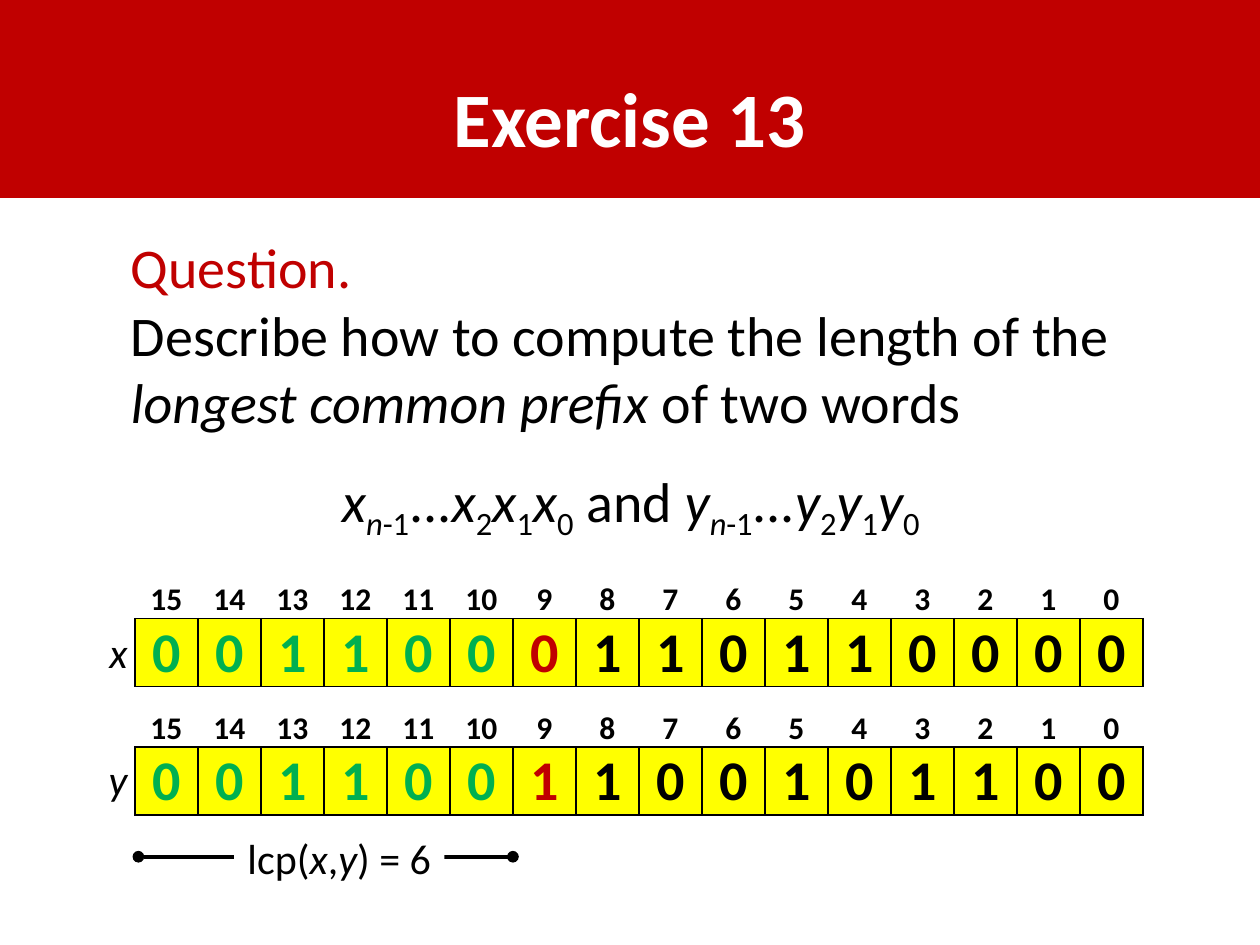
from lxml import etree
from pptx import Presentation
from pptx import util as u
from pptx.dml.color import RGBColor
from pptx.enum import shapes, text
from pptx.oxml import ns

RED, GREEN, YELLOW = "C00000", "00B050", "FFFF00"
BLACK, WHITE = "000000", "FFFFFF"
NO_STYLE = "{2D5ABB26-0587-4C30-8999-92F81FD0307C}"
LEFT, CENTER, RIGHT = text.PP_ALIGN.LEFT, text.PP_ALIGN.CENTER, text.PP_ALIGN.RIGHT


def color(hex_string):
    return RGBColor.from_string(hex_string)


def child(parent, tag, **attributes):
    return etree.SubElement(parent, ns.qn(tag), **attributes)


def indexed_word(name):
    """Runs for a word written as its bits, from n-1 down to 0."""
    runs = [(name, "i"), ("n", "is"), ("-1", "s"), ("...", "")]
    for index in "210":
        runs += [(name, "i"), (index, "s")]
    return runs


class ExerciseSlide:
    font = "Calibri"

    def __init__(self, slide):
        self.slide = slide
        self.shapes = slide.shapes

    def paragraph(self, paragraph, runs, size, ink=BLACK, align=LEFT, bold=False, before=0):
        """Fill a paragraph; each run is (words, flags), i for italic, s for subscript."""
        paragraph.alignment = align
        paragraph.space_before = u.Pt(before)
        font = paragraph.font
        font.name, font.size, font.bold = self.font, u.Pt(size), bold
        font.color.rgb = color(ink)
        for words, flags in runs:
            run = paragraph.add_run()
            run.text = words
            if "i" in flags:
                run.font.italic = True
            if "s" in flags:
                run.font._element.set("baseline", "-25000")

    def title(self, words, box):
        title = self.shapes.title
        title.left, title.top, title.width, title.height = map(u.Cm, box)
        title.text_frame.vertical_anchor = text.MSO_ANCHOR.MIDDLE
        self.paragraph(title.text_frame.paragraphs[0], [(words, "")], 44, WHITE, CENTER, True)

    def rectangle(self, box, fill, line=None):
        rectangle = self.shapes.add_shape(shapes.MSO_SHAPE.RECTANGLE, *map(u.Cm, box))
        rectangle.shadow.inherit = False
        rectangle.fill.solid()
        rectangle.fill.fore_color.rgb = color(fill)
        if line:
            rectangle.line.color.rgb = color(line)
            rectangle.line.width = u.Pt(2)
        else:
            rectangle.line.fill.background()
        return rectangle

    def title_band(self, box):
        band = self.rectangle(box, RED, RED)
        self.shapes.title._element.addprevious(band._element)

    def text_box(self, box, paragraphs):
        frame = self.shapes.add_textbox(*map(u.Cm, box)).text_frame
        frame.word_wrap = True
        for number, options in enumerate(paragraphs):
            line = frame.add_paragraph() if number else frame.paragraphs[0]
            self.paragraph(line, **options)

    def cell(self, cell, words, size, ink, sides, fill=None):
        cell.margin_top = cell.margin_bottom = 0
        cell.vertical_anchor = text.MSO_ANCHOR.MIDDLE
        properties = cell._tc.get_or_add_tcPr()
        for side in sides:
            border = child(properties, f"a:ln{side}", w=str(u.Pt(1)))
            child(child(border, "a:solidFill"), "a:srgbClr", val=BLACK)
        if fill:
            cell.fill.solid()
            cell.fill.fore_color.rgb = color(fill)
        else:
            cell.fill.background()
        self.paragraph(cell.text_frame.paragraphs[0], [(words, "")], size, ink, CENTER, True)

    def bit_table(self, bits, prefix, left, top):
        """Bit positions over the bits; the common prefix and first mismatch are coloured."""
        count, column_width, heights = len(bits), 1.27, (0.74, 1.37)
        table = self.shapes.add_table(2, count, *map(
            u.Cm, (left, top, count * column_width, sum(heights)))).table
        table.first_row = table.horz_banding = False
        table._tbl.tblPr.find(ns.qn("a:tableStyleId")).text = NO_STYLE
        for row, height in zip(table.rows, heights):
            row.height = u.Cm(height)
        for column, bit in enumerate(bits):
            table.columns[column].width = u.Cm(column_width)
            ink = GREEN if column < prefix else RED if column == prefix else BLACK
            self.cell(table.cell(0, column), str(count - 1 - column), 18, BLACK, "B")
            self.cell(table.cell(1, column), bit, 32, ink, "LRTB", YELLOW)

    def span(self, start, end, y):
        """Horizontal line with a dot at both ends."""
        line = self.shapes.add_connector(
            shapes.MSO_CONNECTOR.STRAIGHT, *map(u.Cm, (start, y, end, y)))
        line.line.color.rgb = color(BLACK)
        line.line.width = u.Pt(2.25)
        outline = line.line._get_or_add_ln()
        for tip in ("a:headEnd", "a:tailEnd"):
            child(outline, tip, type="oval")
        child(line._element.spPr, "a:effectLst")

    def span_label(self, box, runs):
        frame = self.rectangle(box, WHITE).text_frame
        frame.vertical_anchor = text.MSO_ANCHOR.TOP
        self.paragraph(frame.paragraphs[0], runs, 24, align=CENTER)


def main():
    deck = Presentation()
    deck.slide_width, deck.slide_height = u.Cm(25.4), u.Cm(19.05)
    page = ExerciseSlide(deck.slides.add_slide(deck.slide_layouts[5]))

    page.title_band((0, 0, 25.4, 3.96))
    page.title("Exercise 13", (1.27, 0.76, 22.86, 3.18))
    question = [("Describe how to compute the length of the ", ""),
                ("longest common prefix", "i"), (" of two words", "")]
    words = indexed_word("x") + [(" and ", "")] + indexed_word("y")
    page.text_box((2.39, 4.57, 20.65, 9.32), [
        dict(runs=[("Question.", "")], size=32, ink=RED),
        dict(runs=question, size=32),
        dict(runs=words, size=32, align=CENTER, before=18),
    ])

    prefix, table_left, table_top, table_pitch = 6, 2.72, 11.71, 2.59
    for number, bits in enumerate(("0011000110110000", "0011001100101100")):
        page.bit_table(bits, prefix, table_left, table_top + number * table_pitch)

    page.span(2.79, 10.34, 17.27)
    page.span_label((4.72, 16.66, 4.24, 1.27),
                    [("lcp(", ""), ("x", "i"), (",", ""), ("y", "i"), (") = 6", "")])
    page.text_box((0.23, 12.5, 2.59, 3.84), [
        dict(runs=[("x", "i")], size=24, align=RIGHT),
        dict(runs=[("y", "i")], size=24, align=RIGHT, before=44),
    ])
    deck.save("out.pptx")


if __name__ == "__main__":
    main()
